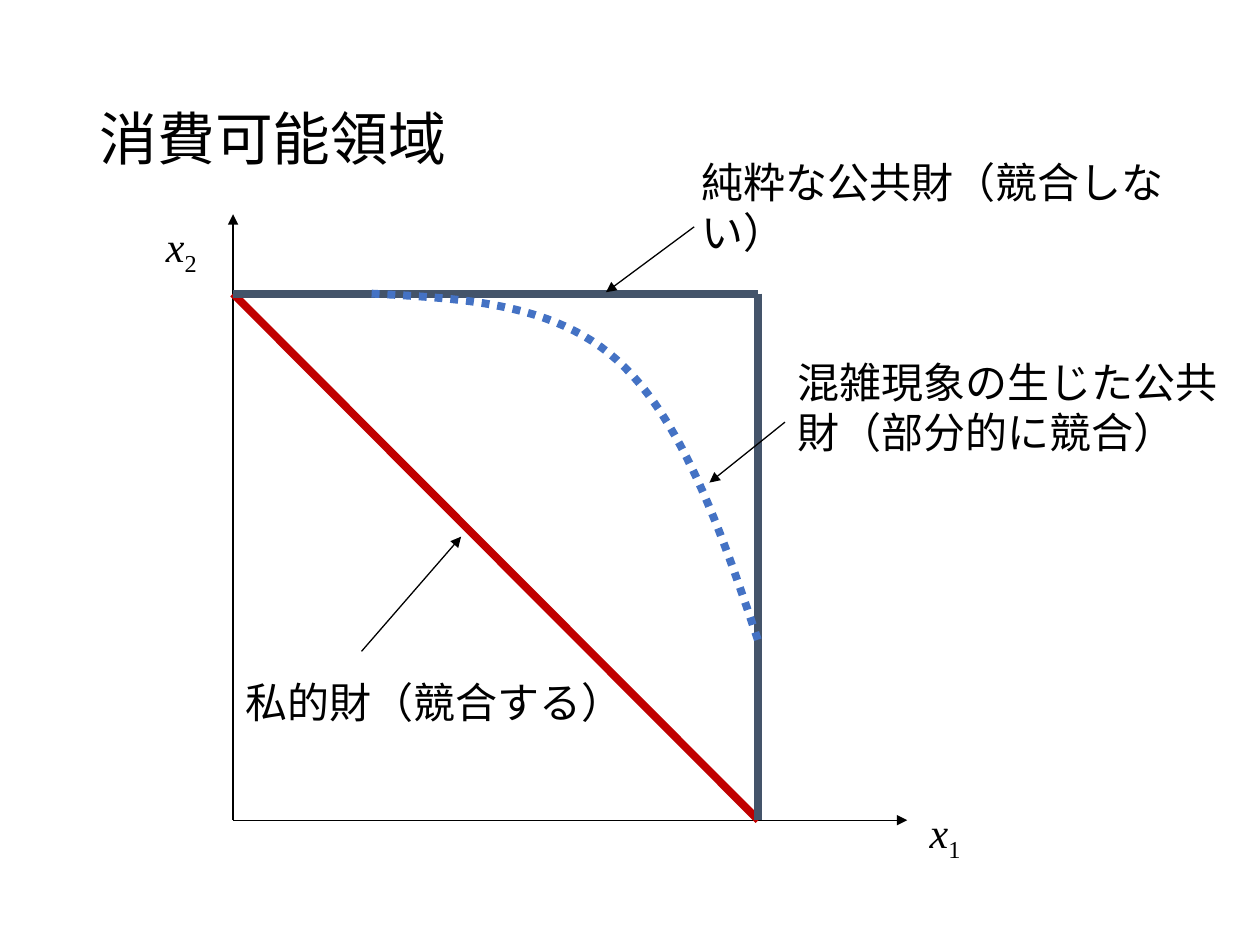
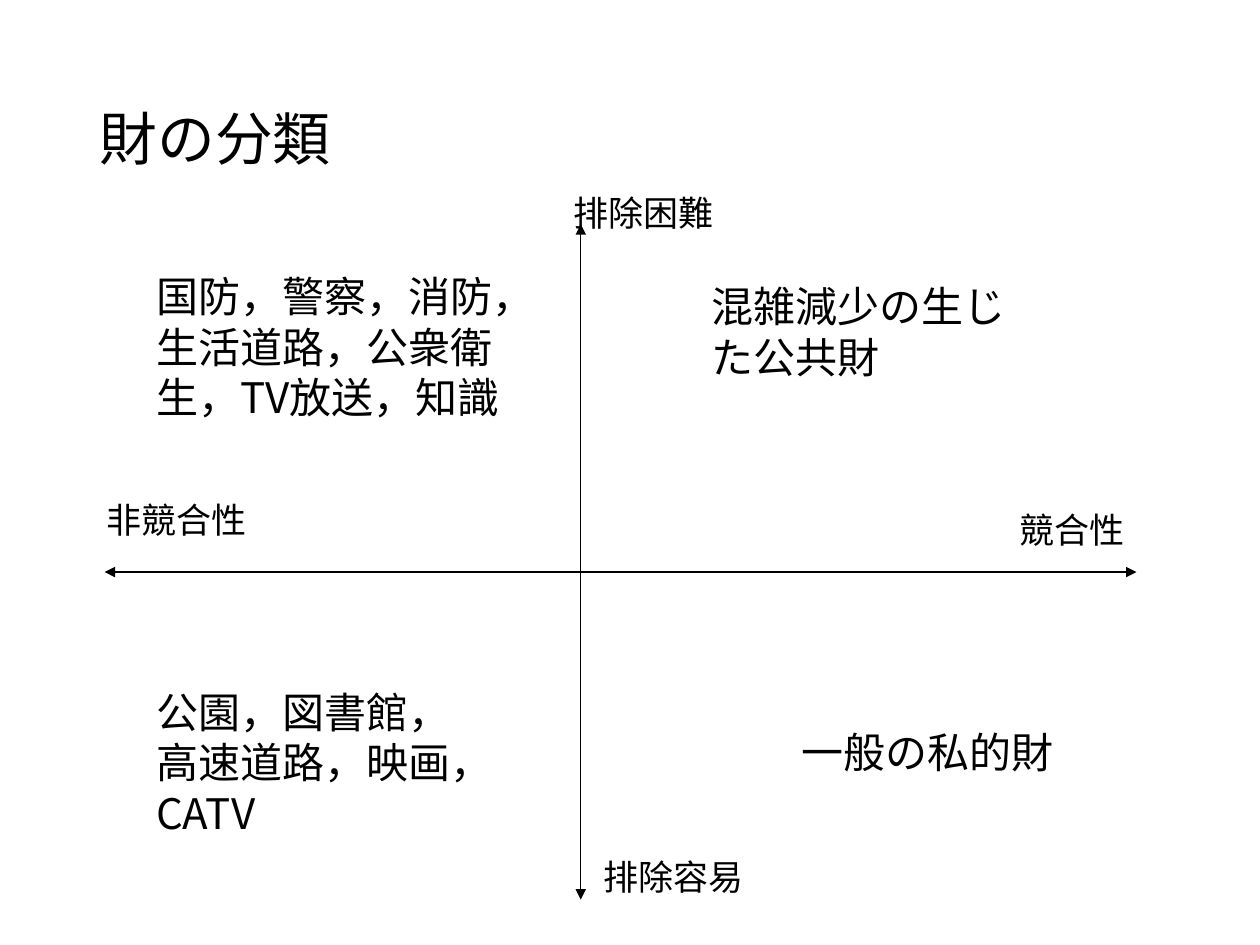
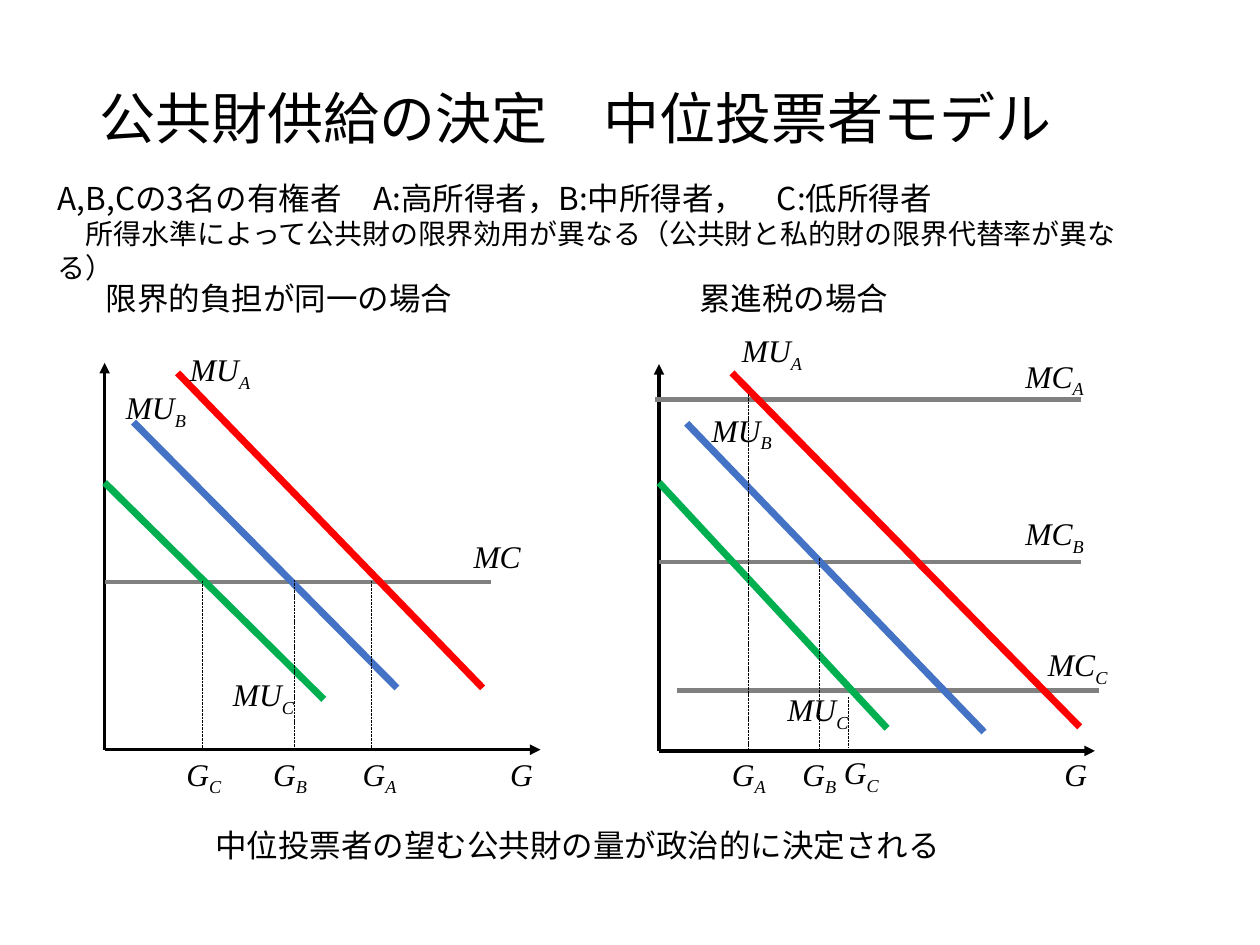
from dataclasses import dataclass
from typing import Any

from lxml.etree import SubElement
from pptx import Presentation
from pptx.dml.color import RGBColor
from pptx.enum.dml import MSO_LINE
from pptx.enum.shapes import MSO_CONNECTOR
from pptx.enum.text import MSO_ANCHOR, MSO_AUTO_SIZE, PP_ALIGN
from pptx.oxml.ns import qn
from pptx.util import Pt

COLORS = {
    "black": "000000",
    "red": "FF0000",
    "dark_red": "C00000",
    "blue": "4472C4",
    "green": "00B050",
    "slate": "44546A",
    "gray": "808080",
}
SANS = "Noto Sans CJK JP"
SERIF = "Times New Roman"
Point = tuple[float, float]


@dataclass
class Label:
    text: str
    left: float
    top: float
    width: float
    height: float = 36
    size: float = 24


@dataclass
class Symbol:
    name: str
    sub: str
    left: float
    top: float
    width: float
    size: float = 18
    sub_italic: bool = True


@dataclass
class Line:
    start: Point
    end: Point
    color: str = "black"
    width: float = 0.75
    head: bool = False
    tail: bool = False
    dash: Any = None


@dataclass
class Panel:
    heading: Label
    origin: Point
    utilities: list[tuple[Point, Point, str]]
    costs: list[tuple[float, float, float]]
    quantities: list[tuple[float, float, float]]
    symbols: list[Symbol]


def rgb(name: str) -> RGBColor:
    return RGBColor.from_string(COLORS[name])


def add_run(p: Any, text: str, *, size: float, font: str = SANS,
            italic: bool = False, baseline: int = 0) -> None:
    r = p.add_run()
    r.text = text
    r.font.size = Pt(size)
    r.font.italic = italic
    r.font.color.rgb = rgb("black")
    r.font.name = font
    rpr = r._r.get_or_add_rPr()
    SubElement(rpr, qn("a:ea"), typeface=font)
    if baseline:
        rpr.set("baseline", str(baseline * 1000))


def add_box(s: Any, left: float, top: float, width: float, height: float) -> Any:
    tf = s.shapes.add_textbox(Pt(left), Pt(top), Pt(width), Pt(height)).text_frame
    tf.word_wrap = True
    tf.auto_size = MSO_AUTO_SIZE.SHAPE_TO_FIT_TEXT
    return tf


def add_label(s: Any, label: Label) -> Any:
    tf = add_box(s, label.left, label.top, label.width, label.height)
    add_run(tf.paragraphs[0], label.text, size=label.size)
    return tf


def add_symbol(s: Any, sym: Symbol) -> None:
    tf = add_box(s, sym.left, sym.top, sym.width, sym.size * 1.2 + 7.2)
    p = tf.paragraphs[0]
    add_run(p, sym.name, size=sym.size, font=SERIF, italic=True)
    if sym.sub:
        add_run(p, sym.sub, size=sym.size, font=SERIF,
                italic=sym.sub_italic, baseline=-25)


def style_line(sp: Any, color: str, width: float, dash: Any = None) -> None:
    sp.line.color.rgb = rgb(color)
    sp.line.width = Pt(width)
    if dash is not None:
        sp.line.dash_style = dash


def add_line(s: Any, line: Line) -> None:
    sp = s.shapes.add_connector(MSO_CONNECTOR.STRAIGHT,
                                *map(Pt, line.start + line.end))
    style_line(sp, line.color, line.width, line.dash)
    ln = sp.line._get_or_add_ln()
    for shown, tag in ((line.head, "a:headEnd"), (line.tail, "a:tailEnd")):
        if shown:
            SubElement(ln, qn(tag), type="triangle")
    SubElement(sp._element.spPr, qn("a:effectLst"))


def bezier(points: list[Point], t: float) -> Point:
    weights = ((1 - t) ** 3, 3 * t * (1 - t) ** 2, 3 * t * t * (1 - t), t ** 3)
    x, y = (sum(w * c for w, c in zip(weights, axis)) for axis in zip(*points))
    return Pt(x), Pt(y)


def add_curve(s: Any, points: list[Point], color: str, width: float, dash: Any) -> None:
    steps = 24
    vertices = [bezier(points[i:i + 4], n / steps)
                for i in range(0, len(points) - 1, 3) for n in range(1, steps + 1)]
    builder = s.shapes.build_freeform(*map(Pt, points[0]))
    builder.add_line_segments(vertices, close=False)
    sp = builder.convert_to_shape()
    sp.fill.background()
    sp.shadow.inherit = False
    style_line(sp, color, width, dash)


def add_slide(prs: Any, title: str, size: float = 33,
              width: float = 620.6, height: float = 104.4) -> Any:
    s = prs.slides.add_slide(prs.slide_layouts[5])
    sp = s.shapes.title
    sp.left, sp.top, sp.width, sp.height = map(Pt, (49.7, 28.8, width, height))
    tf = sp.text_frame
    tf.auto_size = MSO_AUTO_SIZE.NONE
    tf.vertical_anchor = MSO_ANCHOR.MIDDLE
    p = tf.paragraphs[0]
    p.alignment = PP_ALIGN.LEFT
    p.line_spacing = 0.9
    add_run(p, title, size=size)
    return s


def build_consumption(prs: Any) -> None:
    s = add_slide(prs, "消費可能領域")
    left, right, top, bottom = 133.2, 433.4, 167.8, 468.7
    for line in (
        Line((left, bottom), (518.4, bottom), tail=True),
        Line((left, bottom), (left, 122.4), tail=True),
        Line((left, top), (right, bottom), "dark_red", 4.5),
        Line((left, top), (right, top), "slate", 4.5),
        Line((right, top), (right, bottom), "slate", 4.5),
        Line((206.6, 372.2), (263.5, 306.7), tail=True),
        Line((396.7, 129.6), (346.3, 167), tail=True),
        Line((448.6, 241.2), (405.4, 275.8), tail=True),
    ):
        add_line(s, line)
    add_curve(s, [(212.4, top), (264.2, 170.6), (316.1, 172.8), (352.8, 205.9),
                  (389.5, 239), (411.8, 302.4), (right, 366.5)],
              "blue", 4.5, MSO_LINE.ROUND_DOT)
    add_symbol(s, Symbol("x", "1", 524.2, 457.2, 33.8, 24, False))
    add_symbol(s, Symbol("x", "2", 87.8, 122.4, 33.8, 24, False))
    for label in (
        Label("純粋な公共財（競合しない）", 393.8, 85.7, 288, 65.5),
        Label("私的財（競合する）", 133.2, 383, 238.3),
        Label("混雑現象の生じた公共財（部分的に競合）", 448.6, 200.2, 265, 65.5),
    ):
        add_label(s, label)


def build_classification(prs: Any) -> None:
    s = add_slide(prs, "財の分類")
    add_line(s, Line((59.8, 326.9), (649.4, 326.9), head=True, tail=True))
    add_line(s, Line((331.9, 514.1), (331.9, 128.2), head=True, tail=True))
    for label in (
        Label("排除困難", 320.4, 105.8, 96.5, 31, 20),
        Label("排除容易", 337.7, 485.3, 107.3, 31, 20),
        Label("競合性", 575.3, 287.3, 79.2, 31, 20),
        Label("非競合性", 54, 281.5, 96.5, 31, 20),
        Label("国防，警察，消防，生活道路，公衆衛生，TV放送，知識", 82.1, 151.2, 215.3, 93.6),
        Label("一般の私的財", 450.7, 411.8, 164.2),
        Label("混雑減少の生じた公共財", 399.6, 157, 203.8, 64.8),
        Label("公園，図書館，高速道路，映画，CATV", 82.1, 388.8, 193, 93.6),
    ):
        add_label(s, label)


def add_panel(s: Any, panel: Panel) -> None:
    add_label(s, panel.heading)
    x, y = panel.origin
    add_line(s, Line((x, y), (x + 249.1, y), width=2, tail=True))
    add_line(s, Line((x, y), (x, y - 221), width=2, tail=True))
    for start, end, level in panel.costs:
        add_line(s, Line((start, level), (end, level), "gray", 2.5))
    for start, end, color in panel.utilities:
        add_line(s, Line(start, end, color, 4))
    for at, top, bottom in panel.quantities:
        add_line(s, Line((at, top), (at, bottom), width=0.5, dash=MSO_LINE.SQUARE_DOT))
    for sym in panel.symbols:
        add_symbol(s, sym)


def build_median_voter(prs: Any) -> None:
    s = add_slide(prs, "公共財供給の決定　中位投票者モデル", 32, 616.3, 81.4)
    mu, mc, g, g_top = 74.9, 57.6, 40.3, 427.7
    equal_burden = Panel(
        Label("限界的負担が同一の場合", 53.3, 156.2, 219.6, 28.8, 18),
        (59.8, 428.4),
        [((59.8, 275.8), (185, 399.6), "green"),
         ((76.3, 241.2), (226.8, 393.1), "blue"),
         ((101.5, 213.1), (275.8, 393.1), "red")],
        [(59.8, 280.8, 332.6)],
        [(115.9, 331.9, 427.7), (168.5, 331.2, 427), (212.4, 331.9, 427.7)],
        [Symbol("MU", "A", 101.5, 196.6, mu), Symbol("MU", "B", 64.8, 218.2, mu),
         Symbol("MU", "C", 126, 382.3, mu), Symbol("MC", "", 263.5, 303.1, 46.8),
         Symbol("G", "A", 200.2, g_top, g), Symbol("G", "B", 149, g_top, g),
         Symbol("G", "C", 99.4, g_top, g), Symbol("G", "", 284.4, g_top, 33.1)],
    )
    progressive_tax = Panel(
        Label("累進税の場合", 392.4, 156.2, 200.2, 28.8, 18),
        (376.6, 429.1),
        [((376.6, 275.8), (506.9, 416.2), "green"),
         ((392.4, 241.9), (562.3, 418.3), "blue"),
         ((418.3, 213.1), (617, 415.4), "red")],
        [(374.4, 617.8, 228.2), (376.6, 617.8, 321.1), (386.6, 627.8, 394.6)],
        [(427.7, 225.4, 428.4), (468, 319, 428.4), (484.6, 398.2, 427)],
        [Symbol("MU", "A", 416.9, 185.8, mu), Symbol("MU", "B", 399.6, 231.1, mu),
         Symbol("MU", "C", 442.8, 391, mu), Symbol("MC", "A", 578.9, 200.2, mc),
         Symbol("MC", "B", 578.9, 290.2, mc), Symbol("MC", "C", 591.8, 365, mc),
         Symbol("G", "A", 411.1, g_top, g), Symbol("G", "B", 451.4, g_top, g),
         Symbol("G", "C", 475.2, 427, g), Symbol("G", "", 601.2, g_top, 33.1)],
    )
    for panel in (equal_burden, progressive_tax):
        add_panel(s, panel)
    tf = add_label(s, Label("A,B,Cの3名の有権者　A:高所得者，B:中所得者，　C:低所得者",
                            25.9, 98.6, 623.5, 48.2, 18))
    add_run(tf.add_paragraph(),
            "　所得水準によって公共財の限界効用が異なる（公共財と私的財の限界代替率が異なる）",
            size=16)
    add_label(s, Label("中位投票者の望む公共財の量が政治的に決定される",
                       115.9, 468.7, 453.6, 28.8, 18))


def main() -> None:
    prs = Presentation()
    prs.slide_width, prs.slide_height = Pt(720), Pt(540)
    build_consumption(prs)
    build_classification(prs)
    build_median_voter(prs)
    prs.save("out.pptx")


if __name__ == "__main__":
    main()
